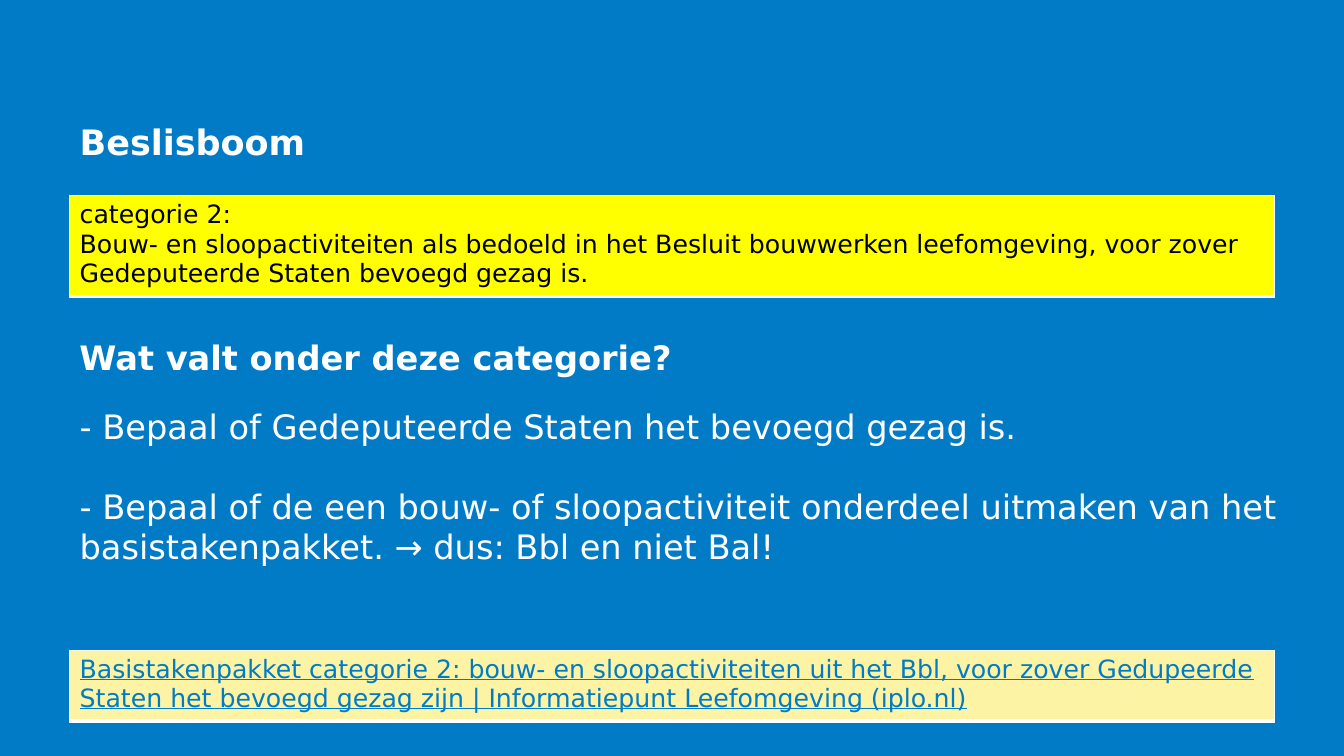
from dataclasses import dataclass

from lxml.etree import SubElement
from pptx import Presentation
from pptx.dml.color import RGBColor
from pptx.enum.text import MSO_ANCHOR, MSO_AUTO_SIZE, PP_ALIGN
from pptx.oxml.ns import qn
from pptx.util import Inches, Pt


@dataclass(frozen=True)
class Theme:
    font: str = "DejaVu Sans"
    blue: str = "017BC6"
    white: str = "FFFFFF"
    black: str = "000000"
    yellow: str = "FFFF00"
    cream: str = "FDF3A5"
    title: float = 25
    body: float = 24
    cell: float = 18


theme = Theme()
LEFT, WIDTH = 0.69, 11.95


def add_run(p, text, size, color, bold=False, underline=False):
    r = p.add_run()
    r.text = text
    r.font.name = theme.font
    r.font.size = Pt(size)
    r.font.color.rgb = RGBColor.from_string(color)
    r.font.bold = bold
    r.font.underline = underline


def place(sp, left, top, width, height):
    sp.left, sp.top = Inches(left), Inches(top)
    sp.width, sp.height = Inches(width), Inches(height)
    tf = sp.text_frame
    tf.word_wrap = True
    tf.auto_size = MSO_AUTO_SIZE.NONE
    tf.vertical_anchor = MSO_ANCHOR.TOP
    return tf


prs = Presentation()
prs.slide_width, prs.slide_height = Inches(13.33), Inches(7.5)
slide = prs.slides.add_slide(prs.slide_layouts[1])
slide.background.fill.solid()
slide.background.fill.fore_color.rgb = RGBColor.from_string(theme.blue)

tf = place(slide.shapes.title, LEFT, 1.19, WIDTH, 0.5)
p = tf.paragraphs[0]
p.alignment = PP_ALIGN.LEFT
p.line_spacing = 0.9
add_run(p, "Beslisboom", theme.title, theme.white, bold=True)

heading = slide.shapes.add_textbox(0, 0, 0, 0)
tf = place(heading, LEFT, 3.29, 6.67, 0.5)
add_run(tf.paragraphs[0], "Wat valt onder deze categorie?", theme.body, theme.white, bold=True)

steps = [
    "- Bepaal of Gedeputeerde Staten het bevoegd gezag is.",
    "- Bepaal of de een bouw- of sloopactiviteit onderdeel uitmaken van het "
    "basistakenpakket. → dus: Bbl en niet Bal!",
]
tf = place(slide.placeholders[1], LEFT, 3.98, 12.21, 1.72)
for i, step in enumerate(steps):
    p = tf.add_paragraph() if i else tf.paragraphs[0]
    pPr = p._p.get_or_add_pPr()
    pPr.set("marL", "0")
    pPr.set("indent", "0")
    SubElement(pPr, qn("a:buNone"))
    p.space_before = Pt(28 if i else 0)
    add_run(p, step, theme.body, theme.white)

bands = [
    (1.94, 1.0, theme.yellow, theme.black, False, [
        "categorie 2:",
        "Bouw- en sloopactiviteiten als bedoeld in het Besluit bouwwerken leefomgeving, "
        "voor zover Gedeputeerde Staten bevoegd gezag is.",
    ]),
    (6.45, 0.7, theme.cream, theme.blue, True, [
        "Basistakenpakket categorie 2: bouw- en sloopactiviteiten uit het Bbl, voor zover "
        "Gedupeerde Staten het bevoegd gezag zijn | Informatiepunt Leefomgeving (iplo.nl)",
    ]),
]
borders = [("a:lnL", 1), ("a:lnR", 1), ("a:lnT", 1), ("a:lnB", 3)]
for top, height, fill, color, underline, lines in bands:
    frame = slide.shapes.add_table(1, 1, Inches(LEFT), Inches(top), Inches(WIDTH), Inches(height))
    cell = frame.table.cell(0, 0)
    cell.fill.solid()
    cell.fill.fore_color.rgb = RGBColor.from_string(fill)
    tcPr = cell._tc.get_or_add_tcPr()
    for i, (tag, width) in enumerate(borders):
        ln = SubElement(tcPr, qn(tag), w=str(Pt(width)))
        SubElement(SubElement(ln, qn("a:solidFill")), qn("a:srgbClr"), val=theme.white)
        tcPr.insert(i, ln)
    p = cell.text_frame.paragraphs[0]
    for i, line in enumerate(lines):
        if i:
            p.add_line_break()
        add_run(p, line, theme.cell, color, underline=underline)

prs.save("out.pptx")
